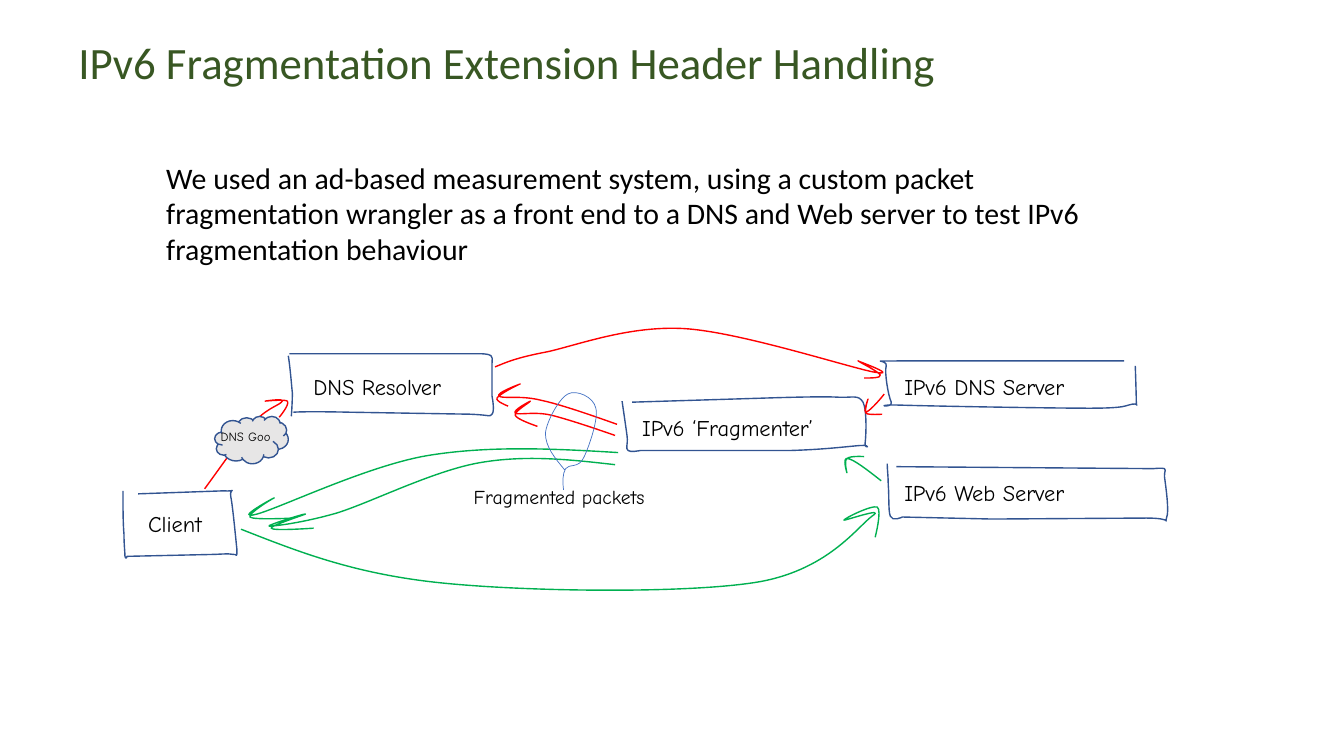
from pptx import Presentation, util as u
from pptx.dml.color import RGBColor
from pptx.enum import shapes, text
from pptx.oxml.ns import qn
from lxml import etree

CELL = u.Inches(1)
COLS, ROWS = 13.33, 7.5
STEPS = 16

GREEN = RGBColor(0x38, 0x57, 0x23)
BLACK = RGBColor(0, 0, 0)
NAVY = RGBColor(0x32, 0x54, 0x91)
BLUE = RGBColor(0x44, 0x72, 0xC4)
RED = RGBColor(0xFF, 0, 0)
LEAF = RGBColor(0, 0xB0, 0x50)
GREY = RGBColor(0xE7, 0xE6, 0xE6)

PLAIN = "Calibri"
HAND = "Comic Neue"

TITLE = "IPv6 Fragmentation Extension Header Handling"
INTRO = ("We used an ad-based measurement system, using a custom packet "
         "fragmentation wrangler as a front end to a DNS and Web server "
         "to test IPv6 fragmentation behaviour")

LABELS = [
    ("Client", 1.37, 5.01, 0.92, 0.37, 16),
    ("DNS Resolver", 3.01, 3.65, 1.87, 0.37, 16),
    ("IPv6 DNS Server", 8.87, 3.65, 2.32, 0.37, 16),
    ("IPv6 Web Server", 8.87, 4.7, 2.25, 0.37, 16),
    ("IPv6 ‘Fragmenter’", 6.27, 4.06, 2.36, 0.37, 16),
    ("DNS Goo", 2.09, 4.21, 0.85, 0.25, 9),
    ("Fragmented packets", 4.6, 4.76, 2.21, 0.34, 14),
]

CLIENT = [
    (1.22, 4.87), (1.22, 5.03, 1.22, 5.19, 1.23, 5.3),
    (1.23, 5.4, 1.24, 5.48, 1.24, 5.52), (1.25, 5.56, 1.26, 5.52, 1.26, 5.52),
    (2.14, 5.5), (2.31, 5.49, 2.28, 5.5, 2.31, 5.5),
    (2.35, 5.49, 2.35, 5.55, 2.35, 5.45), (2.34, 5.36, 2.31, 5.03, 2.29, 4.93),
    (2.27, 4.83, 2.37, 4.88, 2.22, 4.87), (1.37, 4.9)]
RESOLVER_SIDE = [
    (2.86, 3.53), (2.88, 3.66, 2.89, 3.8, 2.9, 3.9),
    (2.9, 4, 2.89, 4.13, 2.89, 4.13)]
RESOLVER = [
    (2.91, 4.09), (3.05, 4.08, 3.47, 4.09, 3.47, 4.09), (4.66, 4.11),
    (4.9, 4.12, 4.84, 4.14, 4.88, 4.11), (4.91, 4.08, 4.88, 3.93, 4.88, 3.93),
    (4.88, 3.85, 4.88, 3.68, 4.88, 3.62), (4.88, 3.55, 4.89, 3.55, 4.87, 3.53),
    (4.85, 3.51, 4.77, 3.51, 4.77, 3.51), (2.87, 3.51)]
FRAGMENTER = [
    (6.17, 3.98), (6.19, 4.12, 6.21, 4.25, 6.22, 4.33),
    (6.23, 4.41, 6.2, 4.45, 6.23, 4.47), (6.25, 4.49, 6.35, 4.47, 6.35, 4.47),
    (7.82, 4.47), (8.18, 4.46, 8.4, 4.43, 8.53, 4.42),
    (8.66, 4.41, 8.58, 4.47, 8.58, 4.4), (8.59, 4.33, 8.6, 4.07, 8.56, 3.99),
    (8.51, 3.91, 8.46, 3.95, 8.3, 3.94), (8.13, 3.93, 7.57, 3.95, 7.57, 3.95),
    (6.27, 3.99)]
DNS_SERVER = [
    (11.15, 3.58), (8.95, 3.58), (8.56, 3.59, 8.81, 3.56, 8.79, 3.63),
    (8.77, 3.69, 8.81, 3.93, 8.84, 3.99), (8.86, 4.06, 8.61, 4.01, 8.94, 4.02),
    (9.27, 4.03, 10.43, 4.05, 10.81, 4.05),
    (11.19, 4.05, 11.16, 4.02, 11.23, 4.01),
    (11.31, 4, 11.26, 4.05, 11.27, 3.99),
    (11.27, 3.93, 11.26, 3.63, 11.26, 3.63)]
WEB_SERVER = [
    (8.8, 4.6), (8.8, 4.66, 8.81, 4.72, 8.81, 4.81),
    (8.82, 4.9, 8.81, 5.07, 8.83, 5.12), (8.85, 5.18, 8.95, 5.13, 8.95, 5.13),
    (9.84, 5.15), (11.37, 5.14), (11.66, 5.14, 11.54, 5.21, 11.57, 5.14),
    (11.6, 5.07, 11.56, 4.81, 11.55, 4.73),
    (11.55, 4.65, 11.57, 4.67, 11.55, 4.65),
    (11.53, 4.64, 11.44, 4.65, 11.44, 4.65), (8.89, 4.63)]
BOXES = [CLIENT, RESOLVER_SIDE, RESOLVER, FRAGMENTER, DNS_SERVER, WEB_SERVER]

ASK = [
    (2.03, 4.85), (2.22, 4.59, 2.4, 4.33, 2.53, 4.18),
    (2.66, 4.04, 2.78, 4.02, 2.8, 3.98), (2.82, 3.95, 2.63, 3.98, 2.63, 3.98),
    (2.63, 3.98, 2.83, 3.96, 2.85, 3.98), (2.88, 4.01, 2.77, 4.14, 2.77, 4.14)]
QUERY = [
    (4.91, 3.64), (5.01, 3.6, 5.11, 3.55, 5.43, 3.49),
    (5.74, 3.42, 6.24, 3.23, 6.78, 3.26), (7.32, 3.29, 8.37, 3.63, 8.66, 3.69),
    (8.95, 3.74, 8.5, 3.58, 8.51, 3.58), (8.52, 3.59, 8.72, 3.69, 8.73, 3.72),
    (8.74, 3.75, 8.65, 3.75, 8.57, 3.75)]
REPLY = [
    (8.77, 3.91), (8.7, 4, 8.62, 4.08, 8.59, 4.09),
    (8.56, 4.09, 8.61, 3.96, 8.61, 3.96), (8.61, 3.96, 8.57, 4.07, 8.59, 4.1),
    (8.61, 4.12, 8.75, 4.11, 8.75, 4.11)]
DNS_FIRST = [
    (6.12, 4.21), (5.84, 4.11, 5.55, 4.01, 5.36, 3.97),
    (5.16, 3.92, 4.98, 3.96, 4.95, 3.93), (4.91, 3.9, 5.16, 3.81, 5.16, 3.81),
    (5.15, 3.81, 4.95, 3.91, 4.93, 3.95), (4.91, 3.98, 5.04, 4.03, 5.04, 4.03)]
DNS_NEXT = [
    (6.1, 4.32), (5.87, 4.24, 5.63, 4.16, 5.47, 4.12),
    (5.3, 4.08, 5.15, 4.12, 5.11, 4.1), (5.08, 4.07, 5.26, 3.98, 5.26, 3.98),
    (5.26, 3.99, 5.1, 4.08, 5.11, 4.12), (5.12, 4.16, 5.33, 4.23, 5.33, 4.23)]
DNS_FLOWS = [REPLY, DNS_FIRST, DNS_NEXT]

FETCH = [
    (2.39, 5.25), (2.95, 5.47, 3.5, 5.69, 4.35, 5.78),
    (5.2, 5.87, 6.76, 5.89, 7.48, 5.78), (8.2, 5.67, 8.5, 5.23, 8.65, 5.12),
    (8.8, 5.02, 8.37, 5.17, 8.37, 5.16), (8.38, 5.14, 8.64, 5.01, 8.7, 5.03),
    (8.75, 5.06, 8.68, 5.33, 8.68, 5.33)]
SERVE = [
    (8.74, 4.77), (8.6, 4.66, 8.47, 4.56, 8.41, 4.55),
    (8.35, 4.53, 8.4, 4.69, 8.4, 4.69), (8.4, 4.69, 8.37, 4.57, 8.4, 4.55),
    (8.43, 4.52, 8.57, 4.53, 8.57, 4.53)]
WEB_FIRST = [
    (6.13, 4.49), (5.49, 4.45, 4.84, 4.42, 4.24, 4.52),
    (3.65, 4.62, 2.8, 5.03, 2.55, 5.1), (2.29, 5.17, 2.73, 4.93, 2.72, 4.94),
    (2.71, 4.94, 2.45, 5.1, 2.48, 5.13), (2.51, 5.16, 2.91, 5.14, 2.91, 5.14)]
WEB_NEXT = [
    (6.1, 4.61), (5.66, 4.56, 5.22, 4.51, 4.76, 4.59),
    (4.3, 4.67, 3.69, 4.98, 3.34, 5.09), (2.99, 5.19, 2.72, 5.22, 2.67, 5.22),
    (2.62, 5.22, 3.03, 5.09, 3.03, 5.1), (3.04, 5.1, 2.67, 5.22, 2.69, 5.24),
    (2.7, 5.27, 3.11, 5.24, 3.11, 5.24)]
WEB_FLOWS = [FETCH, SERVE, WEB_FIRST, WEB_NEXT]

LOOP = [
    (5.59, 4.86), (5.58, 4.78, 5.58, 4.7, 5.61, 4.65),
    (5.64, 4.6, 5.74, 4.65, 5.79, 4.54), (5.84, 4.44, 5.94, 4.15, 5.91, 4.05),
    (5.89, 3.94, 5.72, 3.86, 5.63, 3.91), (5.55, 3.95, 5.42, 4.18, 5.41, 4.3),
    (5.41, 4.43, 5.5, 4.54, 5.6, 4.66)]


def grid(*cells):
    return [round(cell * CELL) for cell in cells]


def pairs(nums):
    return list(zip(nums[::2], nums[1::2]))


def bend(start, nodes, t):
    share = ((1 - t) ** 3, 3 * t * (1 - t) ** 2, 3 * t * t * (1 - t), t ** 3)
    return tuple(sum(s * n for s, n in zip(share, axis))
                 for axis in zip(start, *nodes))


def trace(stroke):
    dots = [stroke[0]]
    for part in stroke[1:]:
        nodes = pairs(part)
        if len(nodes) == 1:
            dots += nodes
        else:
            start = dots[-1]
            dots += [bend(start, nodes, i / STEPS) for i in range(1, STEPS + 1)]
    return [grid(*dot) for dot in dots]


def draw(slide, stroke, ink, width=1):
    dots = trace(stroke)
    pen = slide.shapes.build_freeform(*dots[0])
    pen.add_line_segments(dots[1:], close=False)
    shape = pen.convert_to_shape()
    shape.shadow.inherit = False
    shape.fill.background()
    shape.line.color.rgb = ink
    shape.line.width = u.Pt(width)
    route = next(shape.element.iter(qn("a:path")))
    for node in list(route):
        route.remove(node)
    for i, part in enumerate(stroke):
        tag = "a:moveTo" if i == 0 else "a:lnTo" if len(part) == 2 else "a:cubicBezTo"
        step = etree.SubElement(route, qn(tag))
        for x, y in pairs(grid(*part)):
            etree.SubElement(step, qn("a:pt"), x=str(x - shape.left), y=str(y - shape.top))


def write(slide, words, x, y, w, h, size, font=HAND, ink=BLACK, wrap=False):
    frame = slide.shapes.add_textbox(*grid(x, y, w, h)).text_frame
    frame.word_wrap = wrap
    frame.auto_size = text.MSO_AUTO_SIZE.SHAPE_TO_FIT_TEXT
    run = frame.paragraphs[0].add_run()
    run.text = words
    run.font.name = font
    run.font.size = u.Pt(size)
    run.font.color.rgb = ink


def cloud(slide, x, y, w, h):
    shape = slide.shapes.add_shape(shapes.MSO_SHAPE.CLOUD, *grid(x, y, w, h))
    shape.shadow.inherit = False
    shape.fill.solid()
    shape.fill.fore_color.rgb = GREY
    shape.line.color.rgb = NAVY
    shape.line.width = u.Pt(1)


def main():
    deck = Presentation()
    deck.slide_width, deck.slide_height = grid(COLS, ROWS)
    slide = deck.slides.add_slide(deck.slide_layouts[6])
    write(slide, TITLE, 0.68, 0.3, 12.35, 0.64, 32, PLAIN, GREEN)
    write(slide, INTRO, 1.55, 1.53, 9.72, 1.18, 21.34, PLAIN, wrap=True)
    for ink, group in ((NAVY, BOXES), (RED, [ASK, QUERY])):
        for stroke in group:
            draw(slide, stroke, ink)
    cloud(slide, 2.13, 4.13, 0.73, 0.47)
    for label in LABELS:
        write(slide, *label)
    for ink, group in ((RED, DNS_FLOWS), (LEAF, WEB_FLOWS)):
        for stroke in group:
            draw(slide, stroke, ink)
    draw(slide, LOOP, BLUE, 0.5)
    deck.save("out.pptx")


if __name__ == "__main__":
    main()
